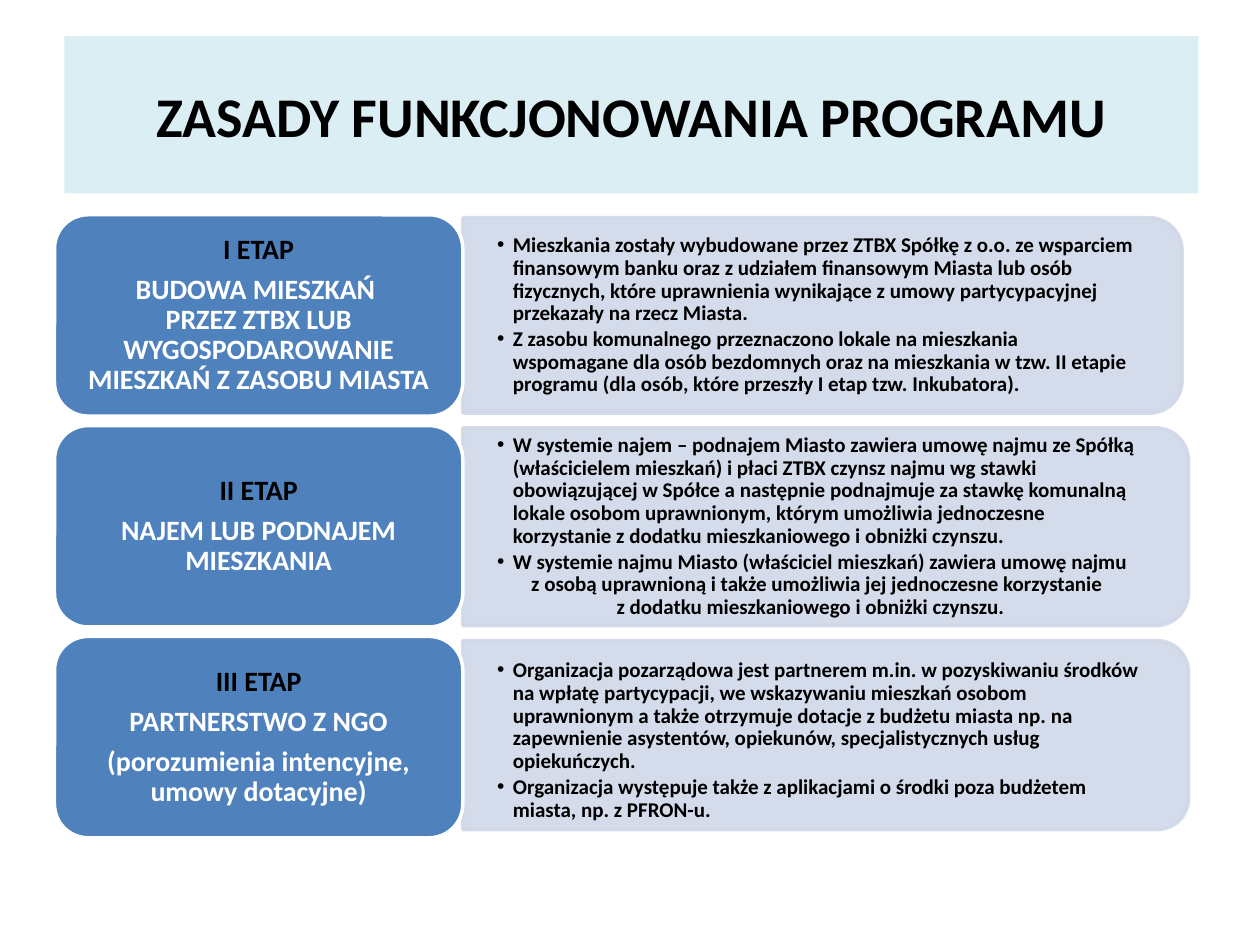
from dataclasses import dataclass

from lxml.etree import SubElement
from pptx import Presentation
from pptx.dml.color import RGBColor
from pptx.enum.shapes import MSO_SHAPE
from pptx.enum.text import MSO_ANCHOR, PP_ALIGN
from pptx.oxml.ns import qn
from pptx.util import Cm, Pt

FONT = "Calibri"
BLACK = RGBColor(0x00, 0x00, 0x00)
WHITE = RGBColor(0xFF, 0xFF, 0xFF)
PALE_CYAN = RGBColor(0xDB, 0xEE, 0xF4)
BLUE = RGBColor(0x4F, 0x81, 0xBD)
PALE_BLUE = RGBColor(0xD0, 0xD8, 0xE8)

STAGE_LEFT, STAGE_TOP, STAGE_WIDTH, STAGE_HEIGHT = 1.1, 4.33, 8.23, 4.06
STAGE_PITCH = 4.25
PANEL_LEFT = 9.33
BULLET_INDENT = 0.32
TAB_STOPS = (0.69, 2.41)


@dataclass(frozen=True)
class Stage:
    heading: str
    names: tuple[str, ...]
    rules: tuple[str, ...]
    panel_width: float
    panel_height: float
    panel_middle: float
    rules_middle: float


STAGES = (
    Stage(
        "I ETAP",
        ("BUDOWA MIESZKAŃ \vPRZEZ ZTBX LUB WYGOSPODAROWANIE MIESZKAŃ Z ZASOBU MIASTA",),
        (
            "Mieszkania zostały wybudowane przez ZTBX Spółkę z o.o. ze wsparciem "
            "finansowym banku oraz z udziałem finansowym Miasta lub osób fizycznych, "
            "które uprawnienia wynikające z umowy partycypacyjnej przekazały na rzecz Miasta.",
            "Z zasobu komunalnego przeznaczono lokale na mieszkania wspomagane dla osób "
            "bezdomnych oraz na mieszkania w tzw. II etapie programu (dla osób, które "
            "przeszły I etap tzw. Inkubatora).",
        ),
        14.5, 3.94, 6.36, 6.36,
    ),
    Stage(
        "II ETAP",
        ("NAJEM LUB PODNAJEM MIESZKANIA",),
        (
            "W systemie najem – podnajem Miasto zawiera umowę najmu ze Spółką "
            "(właścicielem mieszkań) i płaci ZTBX czynsz najmu wg stawki obowiązującej "
            "w Spółce a następnie podnajmuje za stawkę komunalną lokale osobom "
            "uprawnionym, którym umożliwia jednoczesne korzystanie z dodatku "
            "mieszkaniowego i obniżki czynszu.",
            "W systemie najmu Miasto (właściciel mieszkań) zawiera umowę najmu"
            "\v\tz osobą uprawnioną i także umożliwia jej jednoczesne korzystanie"
            "\v\t\tz dodatku mieszkaniowego i obniżki czynszu.",
        ),
        14.63, 3.99, 10.62, 10.62,
    ),
    Stage(
        "III ETAP",
        ("PARTNERSTWO Z NGO", "(porozumienia intencyjne, umowy dotacyjne)"),
        (
            "Organizacja pozarządowa jest partnerem m.in. w pozyskiwaniu środków na "
            "wpłatę partycypacji, we wskazywaniu mieszkań osobom uprawnionym a także "
            "otrzymuje dotacje z budżetu miasta np. na zapewnienie asystentów, "
            "opiekunów, specjalistycznych usług opiekuńczych.",
            "Organizacja występuje także z aplikacjami o środki poza budżetem miasta, "
            "np. z PFRON-u.",
        ),
        14.63, 3.81, 14.82, 14.93,
    ),
)


def set_frame(frame, *, horizontal: float, vertical: float) -> None:
    frame.word_wrap = True
    frame.vertical_anchor = MSO_ANCHOR.MIDDLE
    frame.margin_left = frame.margin_right = Cm(horizontal)
    frame.margin_top = frame.margin_bottom = Cm(vertical)


def add_bullet(paragraph) -> None:
    properties = paragraph._p.get_or_add_pPr()
    properties.set("marL", str(Cm(BULLET_INDENT)))
    properties.set("indent", str(-Cm(BULLET_INDENT)))
    SubElement(properties, qn("a:buFont"), typeface="Arial")
    SubElement(properties, qn("a:buChar"), char="•")
    stops = SubElement(properties, qn("a:tabLst"))
    for position in TAB_STOPS:
        SubElement(stops, qn("a:tab"), pos=str(Cm(position)), algn="l")


def write(frame, text: str, *, size: float, color: RGBColor = BLACK,
          align: PP_ALIGN = PP_ALIGN.CENTER, spacing: float = 0.9,
          after: float = 0, bullet: bool = False) -> None:
    paragraph = frame.paragraphs[0] if not frame.text else frame.add_paragraph()
    paragraph.text = text
    if bullet:
        add_bullet(paragraph)
    paragraph.alignment = align
    paragraph.line_spacing = spacing
    paragraph.space_before = Pt(0)
    paragraph.space_after = Pt(after)
    for run in paragraph.runs:
        run.font.name = FONT
        run.font.size = Pt(size)
        run.font.bold = True
        run.font.color.rgb = color


def paint(shape, fill: RGBColor, line: RGBColor) -> None:
    shape.shadow.inherit = False
    shape.fill.solid()
    shape.fill.fore_color.rgb = fill
    shape.line.color.rgb = line
    shape.line.width = Pt(2)


def draw_panel(slide, stage: Stage) -> None:
    center = PANEL_LEFT + stage.panel_width / 2
    panel = slide.shapes.add_shape(
        MSO_SHAPE.ROUND_2_SAME_RECTANGLE,
        Cm(center - stage.panel_height / 2),
        Cm(stage.panel_middle - stage.panel_width / 2),
        Cm(stage.panel_height), Cm(stage.panel_width),
    )
    panel.rotation = 90
    paint(panel, PALE_BLUE, PALE_BLUE)
    for color in panel._element.spPr.iter(qn("a:srgbClr")):
        SubElement(color, qn("a:alpha"), val="90000")


def draw_rules(slide, stage: Stage) -> None:
    height = stage.panel_height - 0.38
    rules = slide.shapes.add_textbox(
        Cm(PANEL_LEFT), Cm(stage.rules_middle - height / 2),
        Cm(stage.panel_width - 0.18), Cm(height),
    ).text_frame
    set_frame(rules, horizontal=0.69, vertical=0.36)
    for rule in stage.rules:
        write(rules, rule, size=12, align=PP_ALIGN.LEFT, after=1.8, bullet=True)


def draw_stage(slide, stage: Stage, index: int) -> None:
    draw_panel(slide, stage)
    draw_rules(slide, stage)
    label = slide.shapes.add_shape(
        MSO_SHAPE.ROUNDED_RECTANGLE,
        Cm(STAGE_LEFT), Cm(STAGE_TOP + index * STAGE_PITCH),
        Cm(STAGE_WIDTH), Cm(STAGE_HEIGHT),
    )
    paint(label, BLUE, WHITE)
    set_frame(label.text_frame, horizontal=0.17, vertical=0.08)
    write(label.text_frame, stage.heading, size=16, after=5.6)
    for name in stage.names:
        write(label.text_frame, name, size=16, color=WHITE, after=5.6)


def draw_title(slide) -> None:
    title = slide.shapes.title
    title.left, title.top, title.width, title.height = Cm(1.3), Cm(0.73), Cm(22.86), Cm(3.17)
    title.fill.solid()
    title.fill.fore_color.rgb = PALE_CYAN
    set_frame(title.text_frame, horizontal=0.25, vertical=0.13)
    write(title.text_frame, "ZASADY FUNKCJONOWANIA PROGRAMU", size=32, spacing=1.0)


def main() -> None:
    presentation = Presentation()
    presentation.slide_width, presentation.slide_height = Cm(25.4), Cm(19.05)
    slide = presentation.slides.add_slide(presentation.slide_layouts[5])
    draw_title(slide)
    for index, stage in enumerate(STAGES):
        draw_stage(slide, stage, index)
    presentation.save("out.pptx")


if __name__ == "__main__":
    main()
